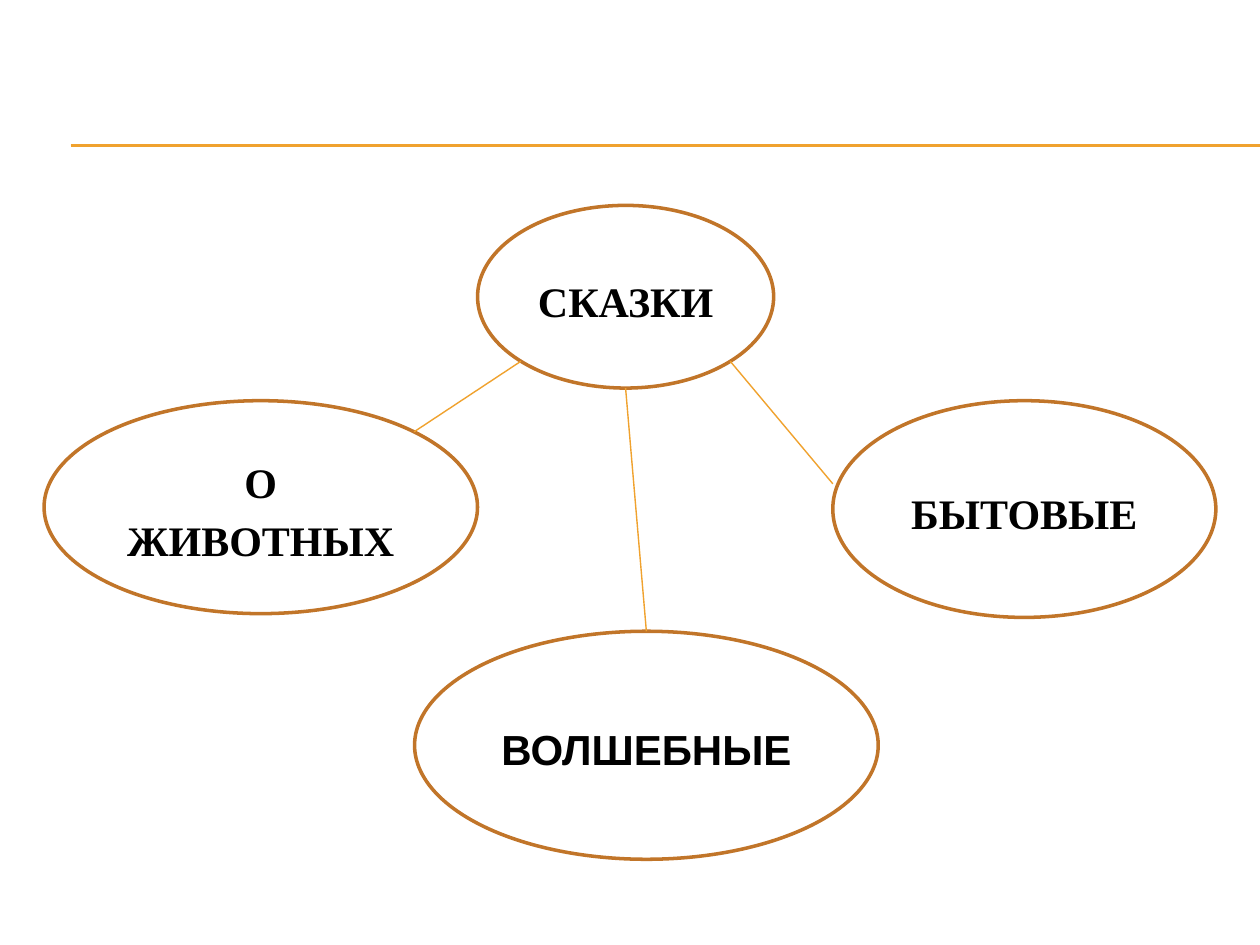
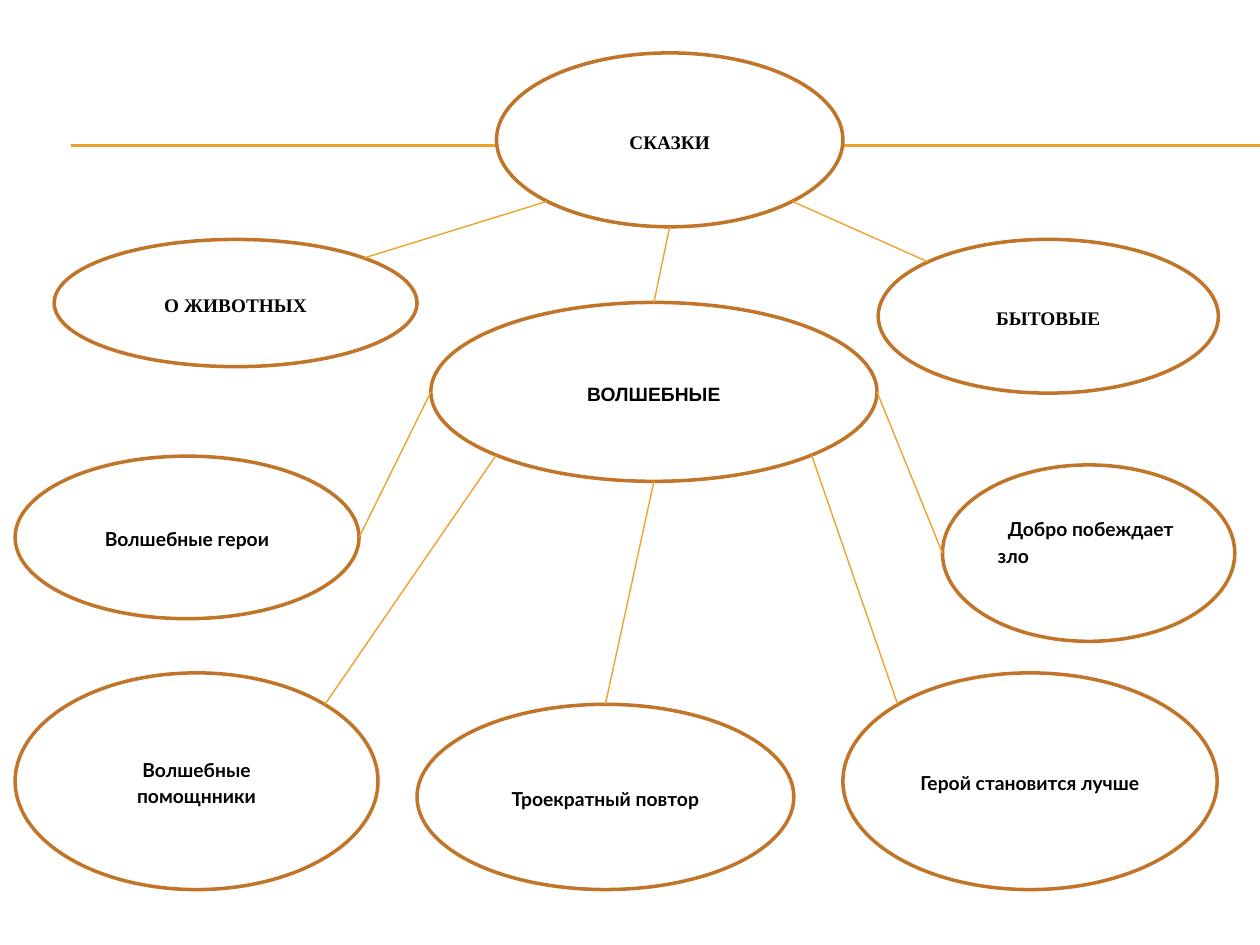
from lxml.etree import SubElement
from pptx import Presentation
from pptx.dml.color import RGBColor
from pptx.enum.shapes import MSO_CONNECTOR, MSO_SHAPE
from pptx.enum.text import MSO_ANCHOR, PP_ALIGN
from pptx.oxml.ns import qn
from pptx.util import Inches, Pt

COLS, ROWS = 100, 75
SERIF, SANS, BODY = "Times New Roman", "Arial", "Lato"
DIAGONAL = 0.5 ** 0.5

# Directions from the centre of an ellipse to its connection points
TOP, BOTTOM, LEFT, RIGHT = (0, -1), (0, 1), (-1, 0), (1, 0)
TOP_LEFT, TOP_RIGHT = (-DIAGONAL, -DIAGONAL), (DIAGONAL, -DIAGONAL)
BOTTOM_LEFT, BOTTOM_RIGHT = (-DIAGONAL, DIAGONAL), (DIAGONAL, DIAGONAL)


def rgb(value):
    return RGBColor.from_string(value)


class Deck:
    """Style of the concept maps and the slide being filled."""
    paper, ink, outline, accent = "FFFFFF", "000000", "C17529", "F0A22E"

    def __init__(self):
        self.prs = Presentation()
        self.prs.slide_width, self.prs.slide_height = Inches(10), Inches(7.5)
        self.s = None
        self.size = None

    def x(self, cols):
        return round(self.prs.slide_width * cols / COLS)

    def y(self, rows):
        return round(self.prs.slide_height * rows / ROWS)

    def slide(self, size):
        """Start a slide with the double rule and the given text size."""
        self.s = self.prs.slides.add_slide(self.prs.slide_layouts[6])
        self.size = size
        for row in (11.5, 11.6):
            self.line((self.x(5.6), self.y(row)), (self.x(COLS), self.y(row)), 0.75)

    def line(self, start, end, width=0.79):
        c = self.s.shapes.add_connector(MSO_CONNECTOR.STRAIGHT, *start, *end)
        c.line.color.rgb = rgb(self.accent)
        c.line.width = Pt(width)
        SubElement(c._element.spPr, qn("a:effectLst"))
        return c

    def oval(self, text, left, top, width, height, font=BODY):
        sp = self.s.shapes.add_shape(MSO_SHAPE.OVAL, self.x(left), self.y(top),
                                     self.x(width), self.y(height))
        sp.shadow.inherit = False
        sp.fill.solid()
        sp.fill.fore_color.rgb = rgb(self.paper)
        sp.line.color.rgb = rgb(self.outline)
        sp.line.width = Pt(2)
        tf = sp.text_frame
        tf.word_wrap = True
        tf.vertical_anchor = MSO_ANCHOR.MIDDLE
        tf.margin_left = tf.margin_right = self.x(1.1)
        tf.text = text
        p = tf.paragraphs[0]
        p.alignment = PP_ALIGN.CENTER
        p.line_spacing, p.space_after = 1.15, Pt(10)
        p.font.name, p.font.size, p.font.bold = font, Pt(self.size), True
        p.font.color.rgb = rgb(self.ink)
        return sp

    def indent_first_line(self, sp, cols, raise_rows):
        """Align text left with a first-line indent and lift it."""
        tf = sp.text_frame
        tf.margin_left = tf.margin_right = self.x(1)
        tf.margin_bottom += self.y(raise_rows)
        p = tf.paragraphs[0]
        p.alignment = PP_ALIGN.LEFT
        p._p.get_or_add_pPr().set("indent", str(self.x(cols)))

    def point(self, sp, site, shift=0):
        dx, dy = site
        return (round(sp.left + sp.width * (1 + dx) / 2),
                round(sp.top + sp.height * (1 + dy) / 2) + self.y(shift))

    def join(self, a, a_site, b, b_site, shift=0):
        """Draw a line between two ovals; shift moves its end by rows."""
        c = self.line(self.point(a, a_site), self.point(b, b_site, shift))
        if b_site == TOP:
            c.end_connect(b, 0)


def tale_kinds(deck):
    deck.slide(24)
    tales = deck.oval("СКАЗКИ", 37.9, 16.3, 23.5, 14.5, SERIF)
    animals = deck.oval("О ЖИВОТНЫХ", 3.5, 31.8, 34.4, 16.9, SERIF)
    everyday = deck.oval("БЫТОВЫЕ", 66.1, 31.8, 30.4, 17.2, SERIF)
    magic = deck.oval("ВОЛШЕБНЫЕ", 32.9, 50.1, 36.8, 18.1, SANS)
    deck.join(tales, BOTTOM_LEFT, animals, TOP_RIGHT)
    deck.join(tales, BOTTOM_RIGHT, everyday, LEFT, shift=-2)
    deck.join(tales, BOTTOM, magic, TOP)


def magic_tale_features(deck):
    deck.slide(11)
    tales = deck.oval("СКАЗКИ", 39.4, 4.2, 27.5, 13.8, SERIF)
    animals = deck.oval("О ЖИВОТНЫХ", 4.3, 19, 28.8, 10.1, SERIF)
    everyday = deck.oval("БЫТОВЫЕ", 69.7, 19, 27, 12.2, SERIF)
    magic = deck.oval("ВОЛШЕБНЫЕ", 34.2, 24, 35.4, 14.2, SANS)
    deck.join(tales, BOTTOM_LEFT, animals, TOP_RIGHT)
    deck.join(tales, BOTTOM_RIGHT, everyday, TOP_LEFT)
    deck.join(tales, BOTTOM, magic, TOP)

    heroes = deck.oval("Волшебные герои", 1.2, 36.2, 27.3, 12.9)
    repeat = deck.oval("Троекратный повтор", 33.1, 55.9, 29.9, 14.7)
    helpers = deck.oval("Волшебные помощнники", 1.2, 53.4, 28.8, 17.2)
    growth = deck.oval("Герой становится лучше", 66.9, 53.4, 29.7, 17.2)
    victory = deck.oval("Добро побеждает зло", 74.8, 36.9, 23.2, 14)
    deck.indent_first_line(victory, 0.8, 2)
    for site, feature, feature_site in (
            (LEFT, heroes, RIGHT), (RIGHT, victory, LEFT),
            (BOTTOM_LEFT, helpers, TOP_RIGHT), (BOTTOM, repeat, TOP),
            (BOTTOM_RIGHT, growth, TOP_LEFT)):
        deck.join(magic, site, feature, feature_site)


def main():
    deck = Deck()
    tale_kinds(deck)
    magic_tale_features(deck)
    deck.prs.save("out.pptx")


if __name__ == "__main__":
    main()
